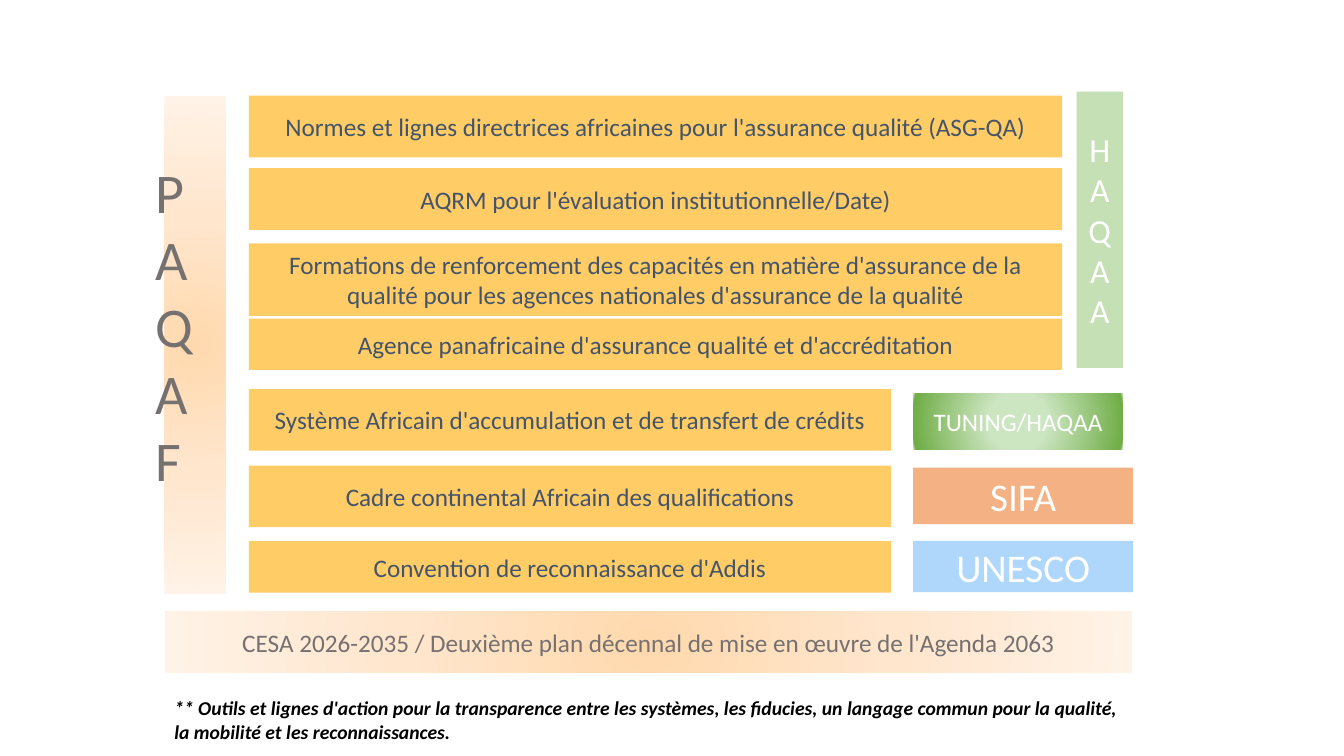
from pptx import Presentation
from pptx import oxml, util as u
from pptx.dml import color
from pptx.enum import shapes, text
from pptx.oxml import ns

COLORS = {
    "amber": "FFCC66", "slate": "44546A", "gray": "767171", "white": "FFFFFF",
    "black": "000000", "pale_green": "C5E0B4", "orange": "F4B183", "sky": "AFD7FB",
}
PEACH = [(0, "FFD9AE"), (50, "FFE6CD"), (100, "FFF2E6")]
GREEN = [(27, "CDE6C2"), (97, "70AD47"), (100, "E6F2E1")]


class Diagram:
    """Holds the style and the current slide."""

    font = "Calibri"

    def __init__(self, slide):
        self.slide = slide

    def set_words(self, shape, words, ink, **formats):
        paragraph = shape.text_frame.paragraphs[0]
        paragraph.text = words
        for name, value in {"name": self.font, **formats}.items():
            setattr(paragraph.font, name, value)
        paragraph.font.color.rgb = color.RGBColor.from_string(COLORS[ink])
        return paragraph

    def radial(self, shape, stops):
        stop_xml = "".join(
            f'<a:gs pos="{position * 1000}"><a:srgbClr val="{value}"/></a:gs>'
            for position, value in stops)
        gradient = oxml.parse_xml(
            f'<a:gradFill {ns.nsdecls("a")} rotWithShape="1"><a:gsLst>{stop_xml}</a:gsLst>'
            '<a:path path="circle"><a:fillToRect l="50000" t="50000" r="50000" b="50000"/>'
            '</a:path></a:gradFill>')
        shape.element.spPr.find(ns.qn("a:prstGeom")).addnext(gradient)

    def block(self, box, fill, words="", ink="slate", size=18):
        shape = self.slide.shapes.add_shape(
            shapes.MSO_SHAPE.RECTANGLE, *map(u.Pt, box))
        shape.shadow.inherit = False
        shape.line.fill.background()
        if isinstance(fill, list):
            self.radial(shape, fill)
        else:
            shape.fill.solid()
            shape.fill.fore_color.rgb = color.RGBColor.from_string(COLORS[fill])
        if words:
            shape.text_frame.word_wrap = True
            shape.text_frame.vertical_anchor = text.MSO_ANCHOR.MIDDLE
            paragraph = self.set_words(shape, words, ink, size=u.Pt(size))
            paragraph.alignment = text.PP_ALIGN.CENTER

    def label(self, box, words, ink, stacked=False, **formats):
        shape = self.slide.shapes.add_textbox(*map(u.Pt, box))
        frame = shape.text_frame
        frame.word_wrap = True
        frame.auto_size = text.MSO_AUTO_SIZE.SHAPE_TO_FIT_TEXT
        if stacked:
            shape.element.txBody.find(ns.qn("a:bodyPr")).set("vert", "wordArtVert")
        self.set_words(shape, words, ink, **formats)


def main():
    presentation = Presentation()
    presentation.slide_width, presentation.slide_height = u.Pt(960), u.Pt(540)
    diagram = Diagram(presentation.slides.add_slide(presentation.slide_layouts[6]))

    # Vertical framework pillar
    diagram.block((117.4, 68.4, 43.9, 355.7), PEACH)
    diagram.label((103.7, 108.7, 72, 314.6), "PAQAF", "gray", stacked=True, size=u.Pt(40))

    # Instruments: top, width, height, wording
    wide, narrow = 581, 458.6
    instruments = [
        (68.4, wide, 44, "Normes et lignes directrices africaines pour l'assurance qualité (ASG-QA)"),
        (120.2, wide, 44, "AQRM pour l'évaluation institutionnelle/Date)"),
        (173.9, wide, 51.8, "Formations de renforcement des capacités en matière d'assurance de la "
                            "qualité pour les agences nationales d'assurance de la qualité"),
        (227.5, wide, 36.7, "Agence panafricaine d'assurance qualité et d'accréditation"),
        (277.9, narrow, 44, "Système Africain d'accumulation et de transfert de crédits"),
        (332.6, narrow, 44, "Cadre continental Africain des qualifications"),
        (386.6, narrow, 36.7, "Convention de reconnaissance d'Addis"),
    ]
    for top, width, height, words in instruments:
        diagram.block((177.8, top, width, height), "amber", words)

    # Programmes behind the instruments
    diagram.block((769, 65.5, 33.1, 197.3), "pale_green", "HAQAA", "white", 24)
    programmes = [
        (280.8, 149.8, 40.3, GREEN, "TUNING/HAQAA", 18),
        (334.1, 157, 40.3, "orange", "SIFA", 28),
        (386.3, 157, 36.7, "sky", "UNESCO", 28),
    ]
    for top, width, height, fill, words, size in programmes:
        diagram.block((652.3, top, width, height), fill, words, "white", size)

    # Strategy base and footnote
    diagram.block((117.7, 436.7, 691.2, 44), PEACH,
                  "CESA 2026-2035 / Deuxième plan décennal de mise en œuvre de l'Agenda 2063", "gray")
    diagram.label((117.4, 493.9, 691.2, 41),
                  "** Outils et lignes d'action pour la transparence entre les systèmes, les fiducies, "
                  "un langage commun pour la qualité, la mobilité et les reconnaissances.",
                  "black", size=u.Pt(14), bold=True, italic=True)

    presentation.save("out.pptx")


if __name__ == "__main__":
    main()
